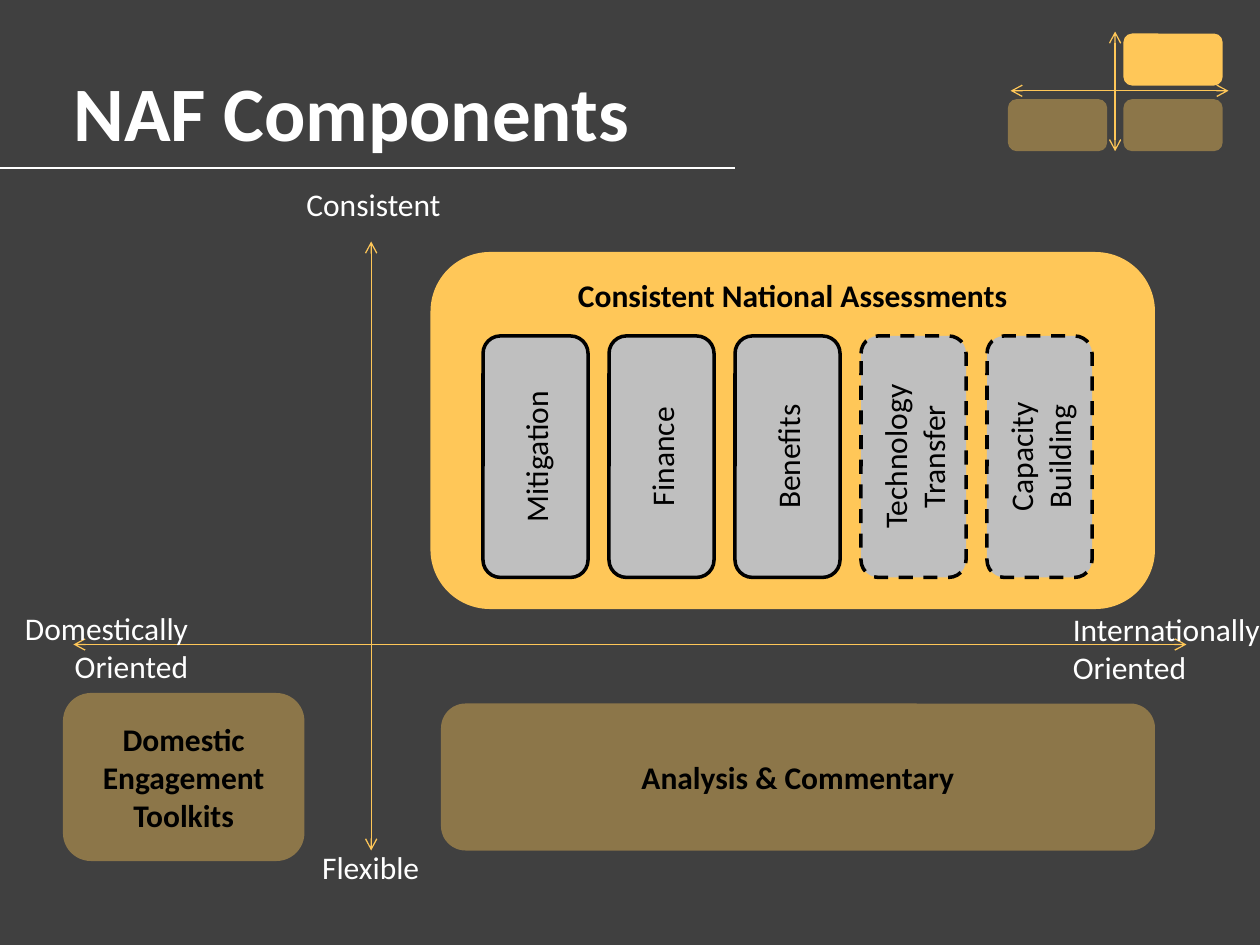
"""Build the NAF Components quadrant slide on a grid of 120 columns by 90 rows."""
from dataclasses import dataclass
from typing import Optional

import pptx
import pptx.dml.color
import pptx.enum.dml
import pptx.enum.shapes
import pptx.enum.text
import pptx.oxml.ns
import pptx.oxml.xmlchemy
import pptx.util

Align = pptx.enum.text.PP_ALIGN
Anchor = pptx.enum.text.MSO_ANCHOR
Dash = pptx.enum.dml.MSO_LINE


@dataclass(frozen=True)
class Theme:
    background: str = "404040"
    accent: str = "FFC758"
    pillar: str = "BFBFBF"
    light: str = "FFFFFF"
    dark: str = "000000"
    font: str = "Calibri"
    body: float = 18
    title: float = 44
    axis_width: float = 0.75
    rule_width: float = 1.5
    border_width: float = 2
    faded: int = 40


@dataclass(frozen=True)
class Area:
    column: float
    row: float
    columns: float
    rows: float


@dataclass(frozen=True)
class Block:
    area: Area
    text: str = ""
    alpha: Optional[int] = None
    anchor: Anchor = Anchor.MIDDLE


@dataclass(frozen=True)
class Label:
    area: Area
    lines: tuple
    align: Align = Align.LEFT


@dataclass(frozen=True)
class Line:
    start: tuple
    end: tuple


THEME = Theme()
UNIT = pptx.util.Inches(1) / 12

AXES = (Line((35.35, 23), (35.35, 81)), Line((7, 61.38), (113, 61.38)))
BLOCKS = (
    Block(Area(41, 24, 69, 34), "Consistent National Assessments", anchor=Anchor.TOP),
    Block(Area(42, 67, 68, 14), "Analysis & Commentary", THEME.faded),
    Block(Area(6, 66, 23, 16), "Domestic Engagement Toolkits", THEME.faded),
)
LABELS = (
    Label(Area(28, 17, 15.4, 4.8), ("Consistent",)),
    Label(Area(29.5, 80.2, 11.8, 4.8), ("Flexible",)),
    Label(Area(101, 57.5, 20.4, 8.5), ("Internationally", "Oriented")),
    Label(Area(1, 57.4, 18.1, 8.5), ("Domestically", "Oriented"), Align.RIGHT),
)
PILLARS = (
    ("Mitigation", Dash.SOLID),
    ("Finance", Dash.SOLID),
    ("Benefits", Dash.SOLID),
    ("Technology Transfer", Dash.DASH),
    ("Capacity Building", Dash.DASH),
)
FIRST_PILLAR = Area(46, 32, 10, 23)
PILLAR_STEP = 12
KEY_AXES = (Line((106.2, 3), (106.2, 14.4)), Line((96.25, 8.65), (117, 8.65)))
KEY_BLOCKS = (
    Block(Area(107, 3.2, 9.45, 4.95)),
    Block(Area(107, 9.45, 9.45, 4.95), alpha=THEME.faded),
    Block(Area(96, 9.45, 9.45, 4.95), alpha=THEME.faded),
)
TITLE_AREA = Area(-3, 3, 73, 15)
TITLE_RULE = Line((0, 16), (70, 16))


def grid(*values: float) -> list[int]:
    """Turn grid units into slide lengths."""
    return [round(value * UNIT) for value in values]


def place(area: Area) -> list[int]:
    """Give the left, top, width and height of an area."""
    return grid(area.column, area.row, area.columns, area.rows)


def color(value: str) -> pptx.dml.color.RGBColor:
    """Turn a hexadecimal string into a colour."""
    return pptx.dml.color.RGBColor.from_string(value)


def write(box, lines: tuple, ink: str, size: float = THEME.body,
          bold: bool = False, align: Align = Align.CENTER) -> None:
    """Write each line as a paragraph with one run."""
    frame = box.text_frame
    for index, line in enumerate(lines):
        para = frame.add_paragraph() if index else frame.paragraphs[0]
        para.alignment = align
        span = para.add_run()
        span.text = line
        span.font.name = THEME.font
        span.font.size = pptx.util.Pt(size)
        span.font.bold = bold
        span.font.color.rgb = color(ink)


def draw_line(shapes, line: Line, ink: str, width: float, arrows: bool = False) -> None:
    """Draw a straight line, with open arrowheads at both ends if asked."""
    connector = shapes.add_connector(
        pptx.enum.shapes.MSO_CONNECTOR.STRAIGHT, *grid(*line.start, *line.end))
    connector.line.color.rgb = color(ink)
    connector.line.width = pptx.util.Pt(width)
    properties = connector.element.spPr
    properties.append(pptx.oxml.xmlchemy.OxmlElement("a:effectLst"))
    if arrows:
        outline = properties.find(pptx.oxml.ns.qn("a:ln"))
        for name in ("a:headEnd", "a:tailEnd"):
            end = pptx.oxml.xmlchemy.OxmlElement(name)
            end.set("type", "arrow")
            outline.append(end)


def rounded(shapes, area: Area, fill: str):
    """Add a rounded rectangle without shadow or outline."""
    box = shapes.add_shape(pptx.enum.shapes.MSO_SHAPE.ROUNDED_RECTANGLE, *place(area))
    box.shadow.inherit = False
    box.fill.solid()
    box.fill.fore_color.rgb = color(fill)
    box.line.fill.background()
    box.text_frame.word_wrap = True
    return box


def draw_block(shapes, block: Block) -> None:
    """Draw an accent block with its bold caption."""
    box = rounded(shapes, block.area, THEME.accent)
    if block.alpha is not None:
        alpha = pptx.oxml.xmlchemy.OxmlElement("a:alpha")
        alpha.set("val", str(block.alpha * 1000))
        box.element.spPr.find(".//" + pptx.oxml.ns.qn("a:srgbClr")).append(alpha)
    box.text_frame.vertical_anchor = block.anchor
    if block.text:
        write(box, (block.text,), THEME.dark, bold=True)


def draw_pillar(shapes, index: int, text: str, dash: Dash) -> None:
    """Draw one pillar with its caption turned upwards."""
    first = FIRST_PILLAR
    area = Area(first.column + index * PILLAR_STEP, first.row, first.columns, first.rows)
    box = rounded(shapes, area, THEME.pillar)
    box.line.color.rgb = color(THEME.dark)
    box.line.width = pptx.util.Pt(THEME.border_width)
    box.line.dash_style = dash
    box.element.txBody.bodyPr.set("vert", "vert270")
    write(box, (text,), THEME.dark)


def draw_label(shapes, label: Label) -> None:
    """Draw an axis label that fits its text."""
    box = shapes.add_textbox(*place(label.area))
    box.text_frame.word_wrap = False
    box.text_frame.auto_size = pptx.enum.text.MSO_AUTO_SIZE.SHAPE_TO_FIT_TEXT
    write(box, label.lines, THEME.light, align=label.align)


def draw_quadrants(shapes, axes: tuple, blocks: tuple) -> None:
    """Draw a pair of axes and the blocks around them."""
    for axis in axes:
        draw_line(shapes, axis, THEME.accent, THEME.axis_width, arrows=True)
    for block in blocks:
        draw_block(shapes, block)


def main() -> None:
    """Build the deck and save it."""
    deck = pptx.Presentation()
    deck.slide_width, deck.slide_height = grid(120, 90)
    page = deck.slides.add_slide(deck.slide_layouts[6])
    page.background.fill.solid()
    page.background.fill.fore_color.rgb = color(THEME.background)
    draw_quadrants(page.shapes, AXES, BLOCKS)
    for label in LABELS:
        draw_label(page.shapes, label)
    for index, (text, dash) in enumerate(PILLARS):
        draw_pillar(page.shapes, index, text, dash)
    draw_quadrants(page.shapes.add_group_shape().shapes, KEY_AXES, KEY_BLOCKS)
    title = page.shapes.add_textbox(*place(TITLE_AREA))
    title.text_frame.word_wrap = True
    title.text_frame.vertical_anchor = Anchor.MIDDLE
    write(title, ("NAF Components",), THEME.light, THEME.title, bold=True)
    draw_line(page.shapes, TITLE_RULE, THEME.light, THEME.rule_width)
    deck.save("out.pptx")


if __name__ == "__main__":
    main()
